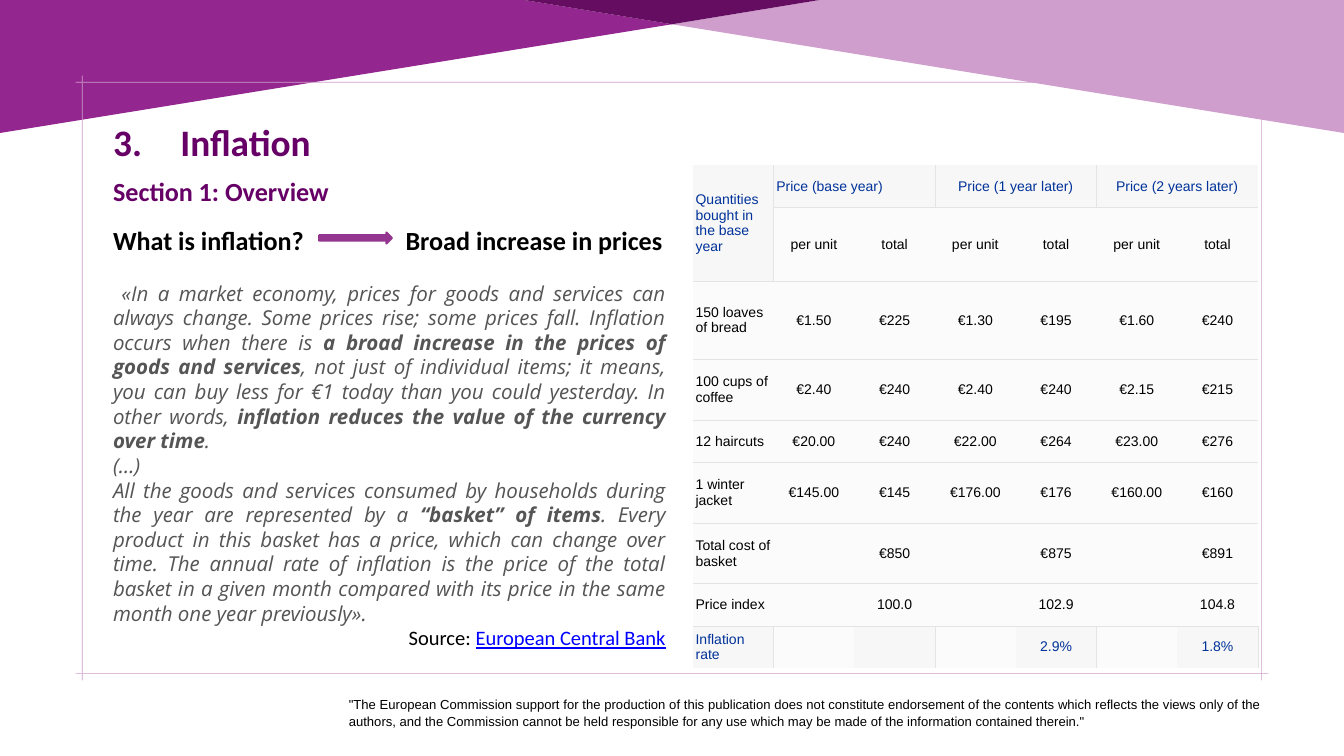
from dataclasses import dataclass

from lxml import etree
from pptx import Presentation
from pptx.dml.color import RGBColor
from pptx.enum.shapes import MSO_SHAPE
from pptx.enum.text import MSO_ANCHOR, MSO_AUTO_SIZE, PP_ALIGN
from pptx.oxml.ns import qn
from pptx.util import Pt

RIGHT_ARROW = MSO_SHAPE.RIGHT_ARROW
TOP, MIDDLE = MSO_ANCHOR.TOP, MSO_ANCHOR.MIDDLE
NO_AUTOFIT = MSO_AUTO_SIZE.NONE
LEFT, CENTER, RIGHT, JUSTIFY = PP_ALIGN.LEFT, PP_ALIGN.CENTER, PP_ALIGN.RIGHT, PP_ALIGN.JUSTIFY

BLACK = RGBColor(0x00, 0x00, 0x00)
PURPLE = RGBColor(0x93, 0x26, 0x8F)
LILAC = RGBColor(0xCF, 0x9E, 0xCC)
DARK_PURPLE = RGBColor(0x64, 0x0D, 0x61)
TITLE_PURPLE = RGBColor(0x66, 0x00, 0x66)
ARROW_PURPLE = RGBColor(0x94, 0x35, 0x8F)
GREY = RGBColor(0x55, 0x55, 0x55)
LINK_BLUE = RGBColor(0x00, 0x00, 0xFF)
TABLE_BLUE = RGBColor(0x00, 0x32, 0x99)
HEADER_FILL = RGBColor(0xF7, 0xF7, 0xF7)
CELL_FILL = RGBColor(0xFB, 0xFB, 0xFB)
BORDER = RGBColor(0xE4, 0xE4, 0xE4)
NO_STYLE = "{2D5ABB26-0587-4C30-8999-92F81FD0307C}"


@dataclass(frozen=True)
class Outline:
    """A filled shape of one or more closed contours."""
    contours: tuple
    color: RGBColor


def bar(left: float, top: float, right: float, bottom: float) -> tuple:
    return (left, top), (right, top), (right, bottom), (left, bottom)


BAR = 0.7
OUTLINES = (
    Outline((((0, 0), (561.6, 0), (720, 26), (0, 142.5)),), PURPLE),
    Outline((((720, 26), (878, 0), (1440, 0), (1440, 142.5)),), LILAC),
    Outline((((561.6, 0), (878, 0), (720, 26)),), DARK_PURPLE),
    Outline(
        tuple(bar(81, y, 1359, y + BAR) for y in (87.8, 721.4))
        + tuple(bar(x, 81, x + BAR, 729) for x in (87.8, 1351.4)),
        LILAC,
    ),
)

QUOTE = (
    (
        ("«In a market economy, prices for goods and services can always change. Some prices "
         "rise; some prices fall. Inflation occurs when there is ", False),
        ("a broad increase in the prices of goods and services", True),
        (", not just of individual items; it means, you can buy less for €1 today than you "
         "could yesterday. In other words, ", False),
        ("inflation reduces the value of the currency over time", True),
        (".", False),
    ),
    (("(…)", False),),
    (
        ("All the goods and services consumed by households during the year are represented "
         "by a ", False),
        ("“basket” of items", True),
        (". Every product in this basket has a price, which can change over time. The annual "
         "rate of inflation is the price of the total basket in a given month compared with "
         "its price in the same month one year previously».", False),
    ),
)
DISCLAIMER = (
    '"The European Commission support for the production of this publication does not '
    "constitute endorsement of the contents which reflects the views only of the authors, and "
    "the Commission cannot be held responsible for any use which may be made of the "
    'information contained therein."'
)

ROWS = (
    ("Quantities bought in the base year", "Price (base year)", "", "Price (1 year later)", "",
     "Price (2 years later)", ""),
    ("",) + ("per unit", "total") * 3,
    ("150 loaves of bread", "€1.50", "€225", "€1.30", "€195", "€1.60", "€240"),
    ("100 cups of coffee", "€2.40", "€240", "€2.40", "€240", "€2.15", "€215"),
    ("12 haircuts", "€20.00", "€240", "€22.00", "€264", "€23.00", "€276"),
    ("1 winter jacket", "€145.00", "€145", "€176.00", "€176", "€160.00", "€160"),
    ("Total cost of basket", "", "€850", "", "€875", "", "€891"),
    ("Price index", "", "100.0", "", "102.9", "", "104.8"),
    ("Inflation rate", "", "", "", "2.9%", "", "1.8%"),
)
ROW_HEIGHTS = (45.3, 78.8, 84, 65, 45.3, 65, 65, 45.3, 44.8)
COLUMN_WIDTH = 86.5
LAST_ROW = len(ROWS) - 1
# Columns with a vertical rule on their right, by row
RULED_COLUMNS = {0: (0, 2, 4), 1: (0,), LAST_ROW: (0, 2, 4, 6)}


def add_text(paragraph, text: str, *, size: float, font: str = "Calibri",
             color: RGBColor = BLACK, bold: bool = False, italic: bool = False,
             underline: bool = False) -> None:
    run = paragraph.add_run()
    run.text = text
    run.font.size = Pt(size)
    run.font.name = font
    run.font.color.rgb = color
    run.font.bold = bold
    run.font.italic = italic
    run.font.underline = underline


def add_tab_stop(paragraph, position: float) -> None:
    tabs = etree.SubElement(paragraph._p.get_or_add_pPr(), qn("a:tabLst"))
    etree.SubElement(tabs, qn("a:tab"), pos=str(Pt(position)), algn="l")


def add_text_frame(slide, left: float, top: float, width: float, height: float):
    box = slide.shapes.add_textbox(Pt(left), Pt(top), Pt(width), Pt(height))
    box.text_frame.word_wrap = True
    return box.text_frame


def draw_outline(slide, outline: Outline) -> None:
    contours = [[(Pt(x), Pt(y)) for x, y in contour] for contour in outline.contours]
    builder = slide.shapes.build_freeform(*contours[0][0])
    for index, (first, *others) in enumerate(contours):
        if index:
            builder.move_to(*first)
        builder.add_line_segments(others, close=True)
    shape = builder.convert_to_shape()
    shape.shadow.inherit = False
    shape.fill.solid()
    shape.fill.fore_color.rgb = outline.color
    shape.line.fill.background()


def write_title(slide) -> None:
    title = slide.shapes.title
    title.left, title.top, title.width, title.height = map(Pt, (114, 123.8, 936, 101.5))
    frame = title.text_frame
    frame.auto_size = NO_AUTOFIT
    frame.vertical_anchor = TOP
    heading, section = frame.paragraphs[0], frame.add_paragraph()
    add_tab_stop(heading, 72)
    for paragraph in (heading, section):
        paragraph.alignment = LEFT
    section.space_before = Pt(12)
    add_text(heading, "3.\tInflation", size=40, color=TITLE_PURPLE, bold=True)
    add_text(section, "Section 1: Overview", size=28, color=TITLE_PURPLE, bold=True)


def write_body(slide) -> None:
    frame = add_text_frame(slide, 114, 236.9, 606.2, 496.8)
    question = frame.paragraphs[0]
    add_tab_stop(question, 313.5)
    question.alignment = LEFT
    add_text(question, "What is inflation?\tBroad increase in prices", size=28, bold=True)
    for index, parts in enumerate(QUOTE):
        paragraph = frame.add_paragraph()
        paragraph.alignment = JUSTIFY
        if index == 0:
            paragraph.space_before = Pt(26.5)
            paragraph._p.get_or_add_pPr().set("indent", str(Pt(9)))
        for text, bold in parts:
            add_text(paragraph, text, size=22, font="Open Sans", color=GREY, bold=bold, italic=True)
    source = frame.add_paragraph()
    source.alignment = RIGHT
    add_text(source, "Source: ", size=22)
    add_text(source, "European Central Bank", size=22, color=LINK_BLUE, underline=True)


def set_borders(cell, sides: dict) -> None:
    """Show or hide each side in order; the line elements must precede the cell's fill."""
    properties = cell._tc.get_or_add_tcPr()
    for index, (side, shown) in enumerate(sides.items()):
        line = etree.Element(qn(f"a:{side}"), w=str(Pt(0.75)))
        if shown:
            fill = etree.SubElement(line, qn("a:solidFill"))
            etree.SubElement(fill, qn("a:srgbClr"), val=str(BORDER))
        else:
            etree.SubElement(line, qn("a:noFill"))
        properties.insert(index, line)


def fill_cell(cell, text: str, row: int, column: int) -> None:
    in_blue = row in (0, LAST_ROW)
    shaded = row == 0 or (row == LAST_ROW and column % 2 == 0) or (row == 1 and column == 0)
    cell.fill.solid()
    cell.fill.fore_color.rgb = HEADER_FILL if shaded else CELL_FILL
    cell.margin_left = cell.margin_right = cell.margin_top = cell.margin_bottom = Pt(3)
    cell.vertical_anchor = MIDDLE
    ruled = RULED_COLUMNS.get(row, ())
    set_borders(cell, {"lnL": column - 1 in ruled, "lnR": column in ruled,
                       "lnT": row > 0, "lnB": row < LAST_ROW})
    if text:
        paragraph = cell.text_frame.paragraphs[0]
        paragraph.alignment = LEFT if column == 0 or (row, column) == (0, 1) else CENTER
        add_text(paragraph, text, size=15, font="Arial", color=TABLE_BLUE if in_blue else BLACK)


def draw_price_table(slide) -> None:
    columns = len(ROWS[0])
    table = slide.shapes.add_table(len(ROWS), columns, Pt(742.3), Pt(177.1),
                                   Pt(columns * COLUMN_WIDTH), Pt(sum(ROW_HEIGHTS))).table
    table._tbl.tblPr.find(qn("a:tableStyleId")).text = NO_STYLE
    table.first_row = table.horz_banding = False
    for column in table.columns:
        column.width = Pt(COLUMN_WIDTH)
    for row, (height, texts) in enumerate(zip(ROW_HEIGHTS, ROWS)):
        table.rows[row].height = Pt(height)
        for column, text in enumerate(texts):
            fill_cell(table.cell(row, column), text, row, column)
    table.cell(0, 0).merge(table.cell(1, 0))
    for column in (1, 3, 5):
        table.cell(0, column).merge(table.cell(0, column + 1))


def draw_arrow(slide) -> None:
    arrow = slide.shapes.add_shape(RIGHT_ARROW, Pt(342), Pt(249), Pt(78), Pt(12))
    arrow.shadow.inherit = False
    arrow.fill.solid()
    arrow.fill.fore_color.rgb = arrow.line.color.rgb = ARROW_PURPLE
    arrow.line.width = Pt(2)


def main() -> None:
    presentation = Presentation()
    presentation.slide_width, presentation.slide_height = Pt(1440), Pt(810)
    slide = presentation.slides.add_slide(presentation.slide_layouts[5])
    for outline in OUTLINES:
        draw_outline(slide, outline)
    disclaimer = add_text_frame(slide, 366.6, 741.2, 992.1, 37.4).paragraphs[0]
    disclaimer.alignment = JUSTIFY
    disclaimer.line_spacing = 1.07
    add_text(disclaimer, DISCLAIMER, size=14, font="Arial")
    write_title(slide)
    write_body(slide)
    draw_price_table(slide)
    draw_arrow(slide)
    presentation.save("out.pptx")


if __name__ == "__main__":
    main()
